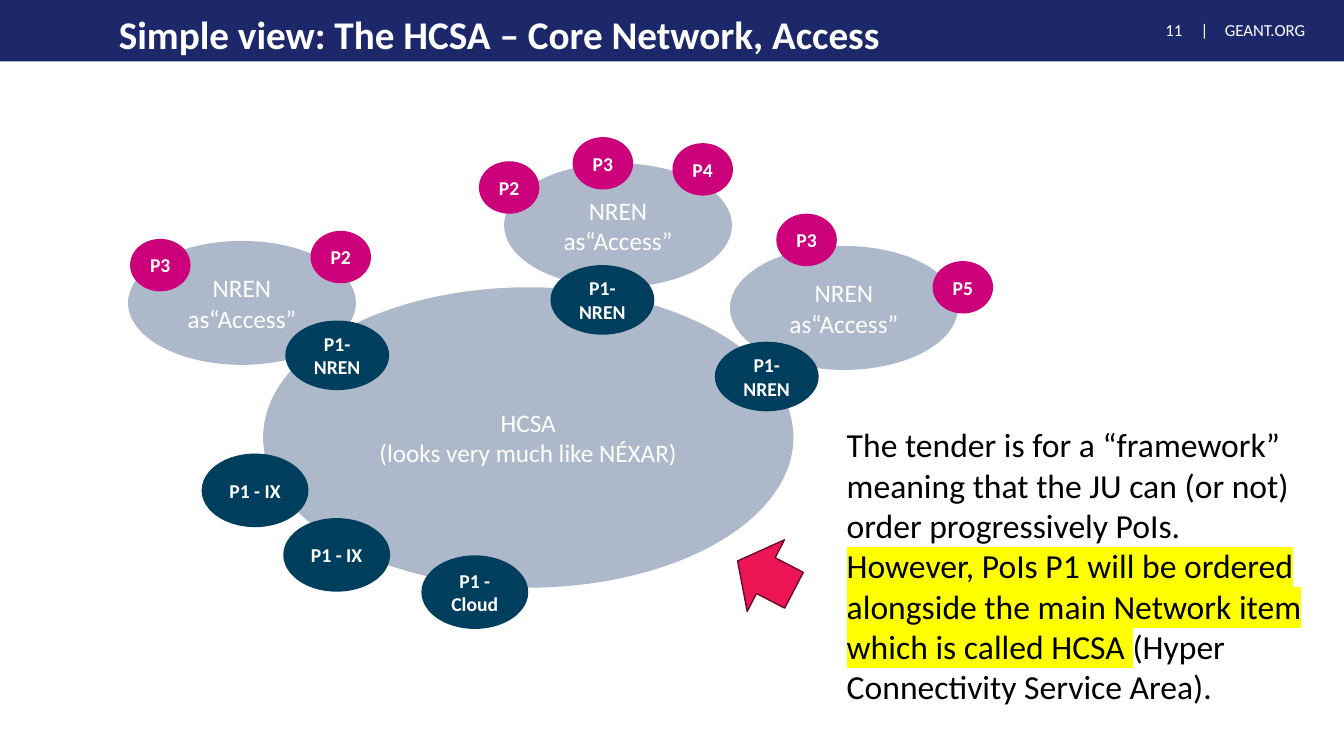
from dataclasses import dataclass

from lxml import etree
from pptx import Presentation
from pptx.dml.color import RGBColor
from pptx.enum.shapes import MSO_SHAPE
from pptx.enum.text import MSO_ANCHOR, PP_ALIGN
from pptx.oxml.ns import qn
from pptx.util import Inches, Pt

RECTANGLE, ELLIPSE, ARROW = MSO_SHAPE.RECTANGLE, MSO_SHAPE.OVAL, MSO_SHAPE.RIGHT_ARROW
TOP, MIDDLE = MSO_ANCHOR.TOP, MSO_ANCHOR.MIDDLE
LEFT, CENTER = PP_ALIGN.LEFT, PP_ALIGN.CENTER


@dataclass(frozen=True)
class Theme:
    font: str = "Calibri"
    banner: str = "1D286B"
    network: str = "ADB9CA"
    access_point: str = "003E5E"
    partner: str = "CC007B"
    arrow: str = "EC1556"
    arrow_line: str = "670926"
    marker: str = "FFFF00"
    light: str = "FFFFFF"
    dark: str = "000000"
    title_size: int = 28
    body_size: int = 24
    network_size: int = 18
    point_size: int = 14
    footer_size: int = 12


class SlideBuilder:
    def __init__(self, page, theme):
        self.page = page
        self.theme = theme

    def style(self, para, size, color, bold=False, align=LEFT):
        para.alignment = align
        para.font.name = self.theme.font
        para.font.size = Pt(size)
        para.font.bold = bold
        para.font.color.rgb = RGBColor.from_string(color)

    def shape(self, kind, bounds, fill, line=None):
        shape = self.page.shapes.add_shape(kind, *map(Inches, bounds))
        shape.shadow.inherit = False
        shape.fill.solid()
        shape.fill.fore_color.rgb = RGBColor.from_string(fill)
        if line:
            shape.line.color.rgb = RGBColor.from_string(line)
            shape.line.width = Pt(1)
        else:
            shape.line.fill.background()
        return shape

    def bubble(self, bounds, fill, lines, size, bold=False, margin=0.1):
        frame = self.shape(ELLIPSE, bounds, fill).text_frame
        frame.word_wrap = True
        frame.vertical_anchor = MIDDLE
        frame.margin_left = frame.margin_right = Inches(margin)
        frame.text = lines
        for para in frame.paragraphs:
            self.style(para, size, self.theme.light, bold, CENTER)

    def text_box(self, bounds, anchor=MIDDLE):
        frame = self.page.shapes.add_textbox(*map(Inches, bounds)).text_frame
        frame.word_wrap = True
        frame.vertical_anchor = anchor
        return frame

    def label(self, bounds, text, size, bold=False, spacing=1.0, tab=None):
        para = self.text_box(bounds).paragraphs[0]
        para.text = text
        para.line_spacing = spacing
        if tab:
            tabs = etree.SubElement(para._p.get_or_add_pPr(), qn("a:tabLst"))
            etree.SubElement(tabs, qn("a:tab"), pos=str(Inches(tab)), algn="l")
        self.style(para, size, self.theme.light, bold)

    def note(self, bounds, paragraphs):
        """Write paragraphs given as lists of (text, highlighted) spans."""
        frame = self.text_box(bounds, TOP)
        for index, spans in enumerate(paragraphs):
            para = frame.add_paragraph() if index else frame.paragraphs[0]
            self.style(para, self.theme.body_size, self.theme.dark)
            for text, highlighted in spans:
                span = para.add_run()
                span.text = text
                if highlighted:
                    mark = etree.SubElement(span._r.get_or_add_rPr(), qn("a:highlight"))
                    etree.SubElement(mark, qn("a:srgbClr"), val=self.theme.marker)


def draw_header(builder):
    theme = builder.theme
    builder.shape(RECTANGLE, (0, -0.04, 13.33, 0.65), theme.banner)
    builder.label((11.46, 0.12, 0.73, 0.36), "11\t|", theme.footer_size, tab=0.35)
    builder.label((12.05, 0.15, 1.2, 0.32), "GEANT.ORG", theme.footer_size, spacing=0.9)
    builder.label((1.08, 0.01, 10.82, 0.71), "Simple view: The HCSA – Core Network, Access",
                  theme.title_size, bold=True, spacing=0.9)


def draw_networks(builder):
    theme = builder.theme
    builder.bubble((2.61, 2.85, 5.26, 2.98), theme.network,
                   "HCSA\n(looks very much like NÉXAR)", theme.network_size)
    for left, top in [(1.27, 2.39), (7.24, 2.44), (5, 1.62)]:
        builder.bubble((left, top, 2.26, 1.23), theme.network,
                       "NREN as“Access”", theme.network_size)


def draw_points(builder):
    theme = builder.theme
    partners = [("P3", 1.29, 2.37), ("P2", 3.08, 2.29), ("P2", 4.75, 1.6), ("P3", 5.68, 1.36),
                ("P4", 6.67, 1.42), ("P3", 7.7, 2.12), ("P5", 9.25, 2.59)]
    nren_points = [("P1- NREN", 2.83, 3.18), ("P1- NREN", 5.46, 2.63), ("P1- NREN", 7.09, 3.39)]
    other_points = [("P1 - IX", 2, 4.5), ("P1 - IX", 2.81, 5.14), ("P1 - Cloud", 4.18, 5.51)]
    groups = [
        (partners, (0.6, 0.52), theme.partner, 0),
        (nren_points, (1.03, 0.69), theme.access_point, 0.1),
        (other_points, (1.06, 0.73), theme.access_point, 0.1),
    ]
    for points, size, fill, margin in groups:
        for name, left, top in points:
            builder.bubble((left, top, *size), fill, name, theme.point_size, True, margin)


def draw_tender_note(builder):
    theme = builder.theme
    builder.note((8.3, 4.16, 4.74, 2.93), [
        [("The tender is for a “framework” meaning that the JU can (or not) "
          "order progressively PoIs.", False)],
        [("However, PoIs P1 will be ordered alongside the main Network item "
          "which is called HCSA ", True),
         ("(Hyper Connectivity Service Area).", False)],
    ])
    arrow = builder.shape(ARROW, (7.28, 5.31, 0.63, 0.8), theme.arrow, theme.arrow_line)
    arrow.rotation = 207.5


def main():
    deck = Presentation()
    deck.slide_width, deck.slide_height = Inches(13.33), Inches(7.5)
    page = deck.slides.add_slide(deck.slide_layouts[6])
    builder = SlideBuilder(page, Theme())
    draw_header(builder)
    draw_networks(builder)
    draw_points(builder)
    draw_tender_note(builder)
    deck.save("out.pptx")


if __name__ == "__main__":
    main()
